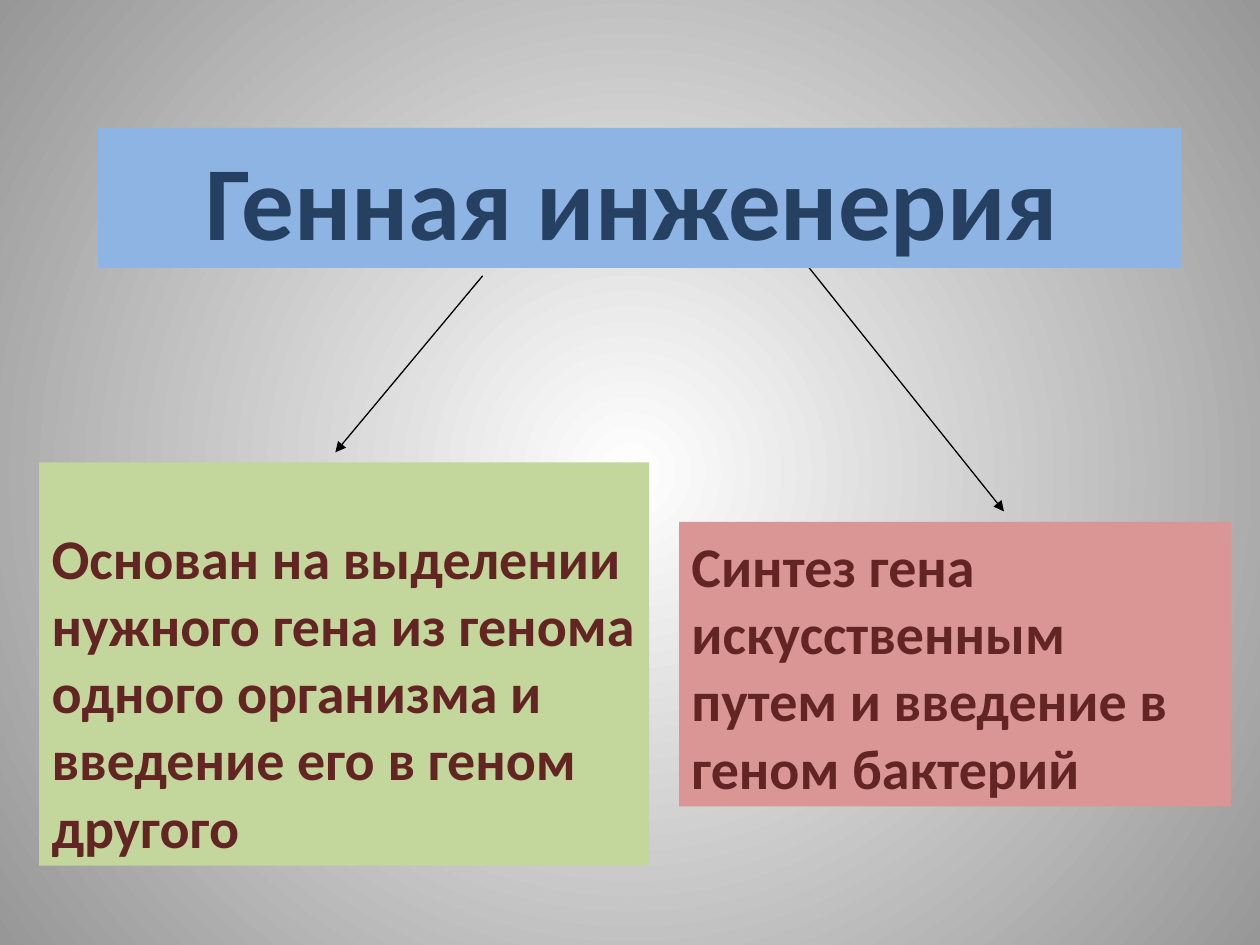
from lxml import etree
from pptx import Presentation
from pptx.dml.color import RGBColor
from pptx.enum.shapes import MSO_CONNECTOR, MSO_SHAPE
from pptx.enum.text import MSO_ANCHOR, PP_ALIGN
from pptx.oxml import parse_xml
from pptx.oxml.ns import nsdecls, qn
from pptx.util import Cm, Pt

RECT = MSO_SHAPE.RECTANGLE
LINE = MSO_CONNECTOR.STRAIGHT
BOTTOM = MSO_ANCHOR.BOTTOM
LEFT = PP_ALIGN.LEFT

FONT = "Calibri"
COLORS = {
    "glow": "FFFFFF",
    "edge": "979797",
    "blue": "8EB4E3",
    "navy": "254061",
    "green": "C3D69B",
    "rose": "D99694",
    "wine": "632523",
    "black": "000000",
}


def color(name):
    """Return the named colour."""
    return RGBColor.from_string(COLORS[name])


def set_back(slide):
    """Fill the background with a glow from the centre."""
    fill = slide.background.fill
    fill.gradient()
    for stop, name, place in zip(fill.gradient_stops, ("glow", "edge"), (0, 1)):
        stop.color.rgb = color(name)
        stop.position = place
    linear = slide.background.fill._xPr.find(".//" + qn("a:lin"))
    linear.getparent().replace(linear, parse_xml(
        f'<a:path {nsdecls("a")} path="circle">'
        '<a:fillToRect l="50000" t="50000" r="50000" b="50000"/></a:path>'))


def add_box(slide, area, text, size, fill, ink, inset=0.25):
    """Add a filled box with bold text at its foot."""
    box = slide.shapes.add_shape(RECT, *map(Cm, area))
    box.shadow.inherit = False
    box.fill.solid()
    box.fill.fore_color.rgb = color(fill)
    box.line.fill.background()
    frame = box.text_frame
    frame.word_wrap = True
    frame.vertical_anchor = BOTTOM
    frame.margin_left = Cm(inset)
    para = frame.paragraphs[0]
    para.text = text
    para.alignment = LEFT
    font = para.font
    font.name = FONT
    font.size = Pt(size)
    font.bold = True
    font.color.rgb = color(ink)


def add_arrow(slide, start, end):
    """Add a thin arrow between two points."""
    arrow = slide.shapes.add_connector(LINE, *map(Cm, start + end))
    arrow.line.color.rgb = color("black")
    arrow.line.width = Pt(0.75)
    etree.SubElement(arrow.line._get_or_add_ln(), qn("a:tailEnd"), type="triangle")
    etree.SubElement(arrow._element.spPr, qn("a:effectLst"))


def main():
    """Build and save the slide."""
    deck = Presentation()
    deck.slide_width, deck.slide_height = Cm(25.4), Cm(19.05)
    slide = deck.slides.add_slide(deck.slide_layouts[6])
    set_back(slide)
    add_arrow(slide, (9.73, 5.56), (6.76, 9.12))
    add_box(slide, (0.79, 9.32, 12.3, 8.13),
            "Основан на выделении нужного гена из генома одного организма "
            "и введение его в геном другого", 32, "green", "wine")
    add_box(slide, (13.69, 10.52, 11.13, 5.74),
            "Синтез гена искусственным путем и введение в геном бактерий",
            32, "rose", "wine")
    add_arrow(slide, (16.28, 5.36), (20.24, 10.31))
    add_box(slide, (1.98, 2.58, 21.83, 2.82),
            "Генная инженерия", 60, "blue", "navy", inset=2.16)
    deck.save("out.pptx")


if __name__ == "__main__":
    main()
